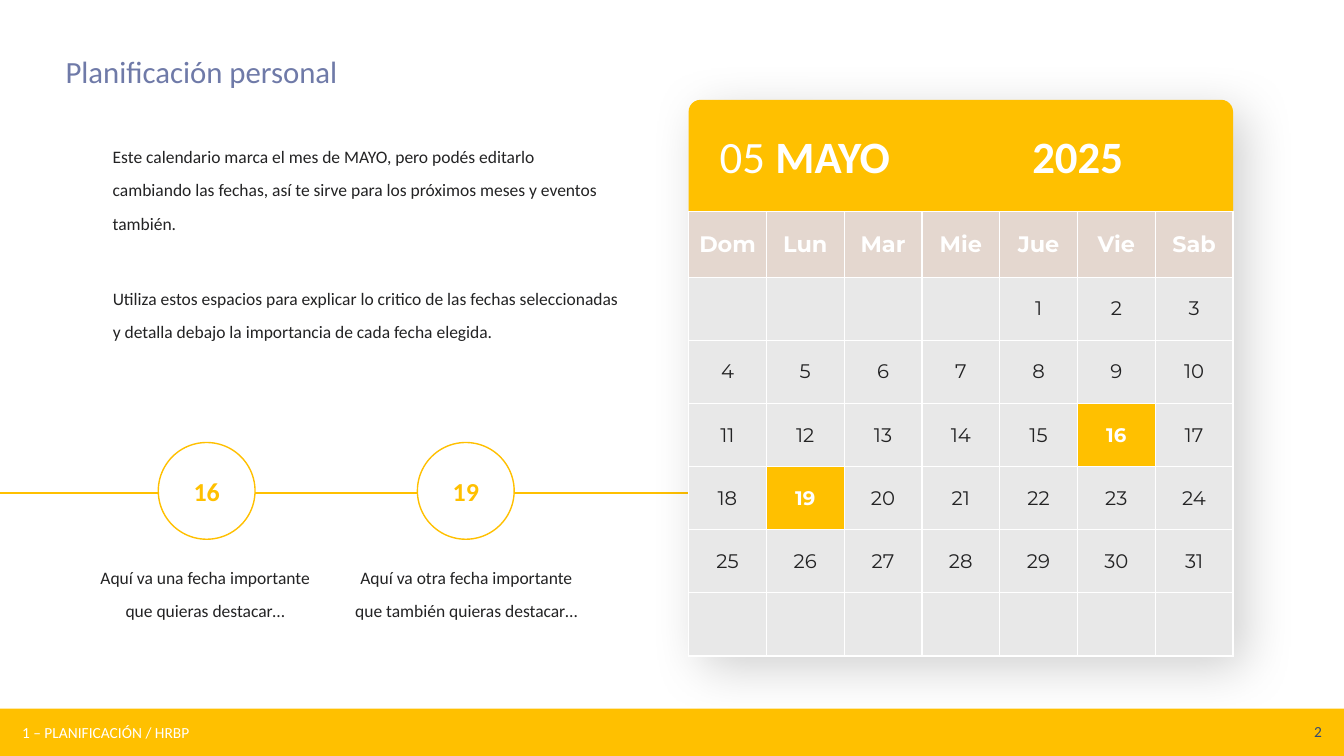
"""Build the personal planning slide with its monthly calendar."""
from dataclasses import dataclass

from lxml.etree import SubElement
from pptx import Presentation
from pptx.dml.color import RGBColor
from pptx.enum.shapes import MSO_CONNECTOR, MSO_SHAPE
from pptx.enum.text import MSO_ANCHOR, MSO_AUTO_SIZE, PP_ALIGN
from pptx.oxml.ns import qn
from pptx.shapes.autoshape import Shape
from pptx.slide import Slide
from pptx.table import _Cell
from pptx.text.text import TextFrame
from pptx.util import Inches, Pt


@dataclass(frozen=True)
class Theme:
    """Colours, fonts and type sizes of the slide."""
    gold: RGBColor = RGBColor(0xFF, 0xC0, 0x00)
    white: RGBColor = RGBColor(0xFF, 0xFF, 0xFF)
    ink: RGBColor = RGBColor(0x23, 0x23, 0x24)
    title: RGBColor = RGBColor(0x6F, 0x7A, 0xA8)
    number: RGBColor = RGBColor(0x32, 0x49, 0x73)
    weekday: RGBColor = RGBColor(0xE4, 0xD7, 0xCF)
    day: RGBColor = RGBColor(0xE8, 0xE8, 0xE8)
    font: str = "Calibri"
    calendar_font: str = "Montserrat"
    month_size: float = 32
    title_size: float = 22
    milestone_size: float = 18.5
    weekday_size: float = 16
    day_size: float = 14
    body_size: float = 12.5
    footer_size: float = 11


@dataclass(frozen=True)
class Area:
    """Left, top, width and height in inches."""
    left: float
    top: float
    width: float
    height: float

    def lengths(self) -> list[Inches]:
        """Return the four measures as lengths."""
        return [Inches(value) for value in (self.left, self.top, self.width, self.height)]


@dataclass(frozen=True)
class Passage:
    """A block of running text."""
    text: str
    area: Area
    align: PP_ALIGN = PP_ALIGN.LEFT


@dataclass(frozen=True)
class Milestone:
    """A highlighted date on the timeline."""
    day: int
    left: float


THEME = Theme()
WIDTH, HEIGHT = 13.33, 7.5
WEEKDAYS = ("Dom", "Lun", "Mar", "Mie", "Jue", "Vie", "Sab")
WEEKS = 6
FIRST_WEEKDAY = 4
DAYS = 31
CARD = Area(6.83, 0.99, 5.4, 5.51)
GRID = Area(6.83, 2.1, 5.4, 4.41)
WEEKDAY_HEIGHT = 0.65
MILESTONES = (Milestone(16, 1.57), Milestone(19, 4.14))
PASSAGES = (
    Passage("Este calendario marca el mes de MAYO, pero podés editarlo cambiando las fechas, "
            "así te sirve para los próximos meses y eventos también.",
            Area(1.02, 1.27, 5.04, 1.11)),
    Passage("Utiliza estos espacios para explicar lo critico de las fechas seleccionadas "
            "y detalla debajo la importancia de cada fecha elegida.",
            Area(1.02, 2.68, 5.21, 0.77)),
    Passage("Aquí va una fecha importante que quieras destacar…",
            Area(0.76, 5.45, 2.55, 0.77), PP_ALIGN.CENTER),
    Passage("Aquí va otra fecha importante que también quieras destacar…",
            Area(3.35, 5.45, 2.55, 0.77), PP_ALIGN.CENTER),
)


def write(frame: TextFrame, text: str, *, size: float, color: RGBColor, bold: bool = False,
          font: str = THEME.font, align: PP_ALIGN = PP_ALIGN.LEFT,
          anchor: MSO_ANCHOR = MSO_ANCHOR.TOP, spacing: float | Pt | None = None,
          wrap: bool = True) -> None:
    """Append a formatted span to the first paragraph of a frame."""
    frame.word_wrap = wrap
    frame.vertical_anchor = anchor
    para = frame.paragraphs[0]
    para.alignment = align
    para.line_spacing = spacing
    span = para.add_run()
    span.text = text
    span.font.name = font
    span.font.size = Pt(size)
    span.font.bold = bold
    span.font.color.rgb = color


def add_panel(page: Slide, kind: MSO_SHAPE, area: Area, fill: RGBColor,
              line: RGBColor | None = None) -> Shape:
    """Add a filled shape without shadow."""
    panel = page.shapes.add_shape(kind, *area.lengths())
    panel.fill.solid()
    panel.fill.fore_color.rgb = fill
    if line is None:
        panel.line.fill.background()
    else:
        panel.line.color.rgb = line
        panel.line.width = Pt(1)
    panel.shadow.inherit = False
    return panel


def add_title(page: Slide) -> None:
    """Place and fill the title placeholder."""
    title = page.shapes.title
    title.left, title.top, title.width, title.height = Area(0.55, 0.43, 9.15, 0.49).lengths()
    title.text_frame.auto_size = MSO_AUTO_SIZE.NONE
    write(title.text_frame, "Planificación personal", size=THEME.title_size,
          color=THEME.title, spacing=Pt(29.4))


def add_timeline(page: Slide) -> None:
    """Draw the line and the circled dates."""
    line = page.shapes.add_connector(MSO_CONNECTOR.STRAIGHT, 0, Inches(4.89),
                                     Inches(8.28), Inches(4.89))
    line.line.color.rgb = THEME.gold
    line.line.width = Pt(1)
    SubElement(line._element.spPr, qn("a:effectLst"))
    for milestone in MILESTONES:
        circle = add_panel(page, MSO_SHAPE.OVAL, Area(milestone.left, 4.39, 0.96, 0.96),
                           THEME.white, THEME.gold)
        write(circle.text_frame, str(milestone.day), size=THEME.milestone_size, bold=True,
              color=THEME.gold, align=PP_ALIGN.CENTER, anchor=MSO_ANCHOR.MIDDLE)


def add_card(page: Slide) -> None:
    """Draw the shadowed calendar card."""
    card = add_panel(page, MSO_SHAPE.ROUNDED_RECTANGLE, CARD, THEME.gold)
    card.adjustments[0] = 0.022
    effects = card._element.spPr.find(qn("a:effectLst"))
    shadow = SubElement(effects, qn("a:outerShdw"), blurRad=str(Pt(37)), dist=str(Pt(13)),
                        dir="2700000", algn="tl", rotWithShape="0")
    color = SubElement(shadow, qn("a:srgbClr"), val="000000")
    SubElement(color, qn("a:alpha"), val="18000")


def format_cell(cell: _Cell, fill: RGBColor) -> None:
    """Give a cell white borders and a solid fill."""
    properties = cell._tc.get_or_add_tcPr()
    for side in ("lnL", "lnR", "lnT", "lnB"):
        border = SubElement(properties, qn(f"a:{side}"), w=str(Pt(1)))
        paint = SubElement(border, qn("a:solidFill"))
        SubElement(paint, qn("a:srgbClr"), val=str(THEME.white))
    cell.fill.solid()
    cell.fill.fore_color.rgb = fill


def add_calendar(page: Slide) -> None:
    """Fill the month table, marking the milestone days."""
    table = page.shapes.add_table(WEEKS + 1, len(WEEKDAYS), *GRID.lengths()).table
    table.horz_banding = False
    for row in table.rows:
        row.height = Inches((GRID.height - WEEKDAY_HEIGHT) / WEEKS)
    table.rows[0].height = Inches(WEEKDAY_HEIGHT)
    marked = {milestone.day for milestone in MILESTONES}
    centred = {"font": THEME.calendar_font, "align": PP_ALIGN.CENTER}
    for column, weekday in enumerate(WEEKDAYS):
        heading = table.cell(0, column)
        format_cell(heading, THEME.weekday)
        heading.margin_left = heading.margin_right = Inches(0.08)
        heading.vertical_anchor = MSO_ANCHOR.MIDDLE
        write(heading.text_frame, weekday, size=THEME.weekday_size, color=THEME.white,
              bold=True, **centred)
        for week in range(WEEKS):
            cell = table.cell(week + 1, column)
            day = week * len(WEEKDAYS) + column - FIRST_WEEKDAY + 1
            chosen = day in marked
            format_cell(cell, THEME.gold if chosen else THEME.day)
            cell.vertical_anchor = MSO_ANCHOR.MIDDLE
            if 1 <= day <= DAYS:
                write(cell.text_frame, str(day), size=THEME.day_size, bold=chosen,
                      color=THEME.white if chosen else THEME.ink, **centred)


def add_month(page: Slide) -> None:
    """Write the month and year over the card."""
    frame = page.shapes.add_textbox(*Area(7.04, 1.23, 5.2, 0.64).lengths()).text_frame
    tabs = SubElement(frame.paragraphs[0]._p.get_or_add_pPr(), qn("a:tabLst"))
    SubElement(tabs, qn("a:tab"), pos=str(Inches(3.1)), algn="l")
    write(frame, "05", size=THEME.month_size, color=THEME.white)
    write(frame, " MAYO\t2025", size=THEME.month_size, color=THEME.white, bold=True)


def add_footer(page: Slide) -> None:
    """Draw the bottom band with section and page number."""
    add_panel(page, MSO_SHAPE.RECTANGLE, Area(0, 7.03, WIDTH, 0.47), THEME.gold)
    section = add_panel(page, MSO_SHAPE.RECTANGLE, Area(0.12, 7.12, 1.91, 0.29), THEME.gold)
    write(section.text_frame, "1 – PLANIFICACIÓN / HRBP", size=THEME.footer_size,
          color=THEME.white, wrap=False)
    number = add_panel(page, MSO_SHAPE.RECTANGLE, Area(12.08, 7.06, 1.13, 0.4), THEME.gold)
    write(number.text_frame, "2", size=THEME.footer_size, color=THEME.number,
          align=PP_ALIGN.RIGHT, anchor=MSO_ANCHOR.MIDDLE)


def main() -> None:
    """Build and save the deck."""
    deck = Presentation()
    deck.slide_width, deck.slide_height = Inches(WIDTH), Inches(HEIGHT)
    page = deck.slides.add_slide(deck.slide_layouts[5])
    add_title(page)
    add_timeline(page)
    add_card(page)
    add_calendar(page)
    add_month(page)
    for passage in PASSAGES:
        box = page.shapes.add_textbox(*passage.area.lengths())
        write(box.text_frame, passage.text, size=THEME.body_size, color=THEME.ink,
              align=passage.align, spacing=1.6)
    add_footer(page)
    deck.save("out.pptx")


if __name__ == "__main__":
    main()
